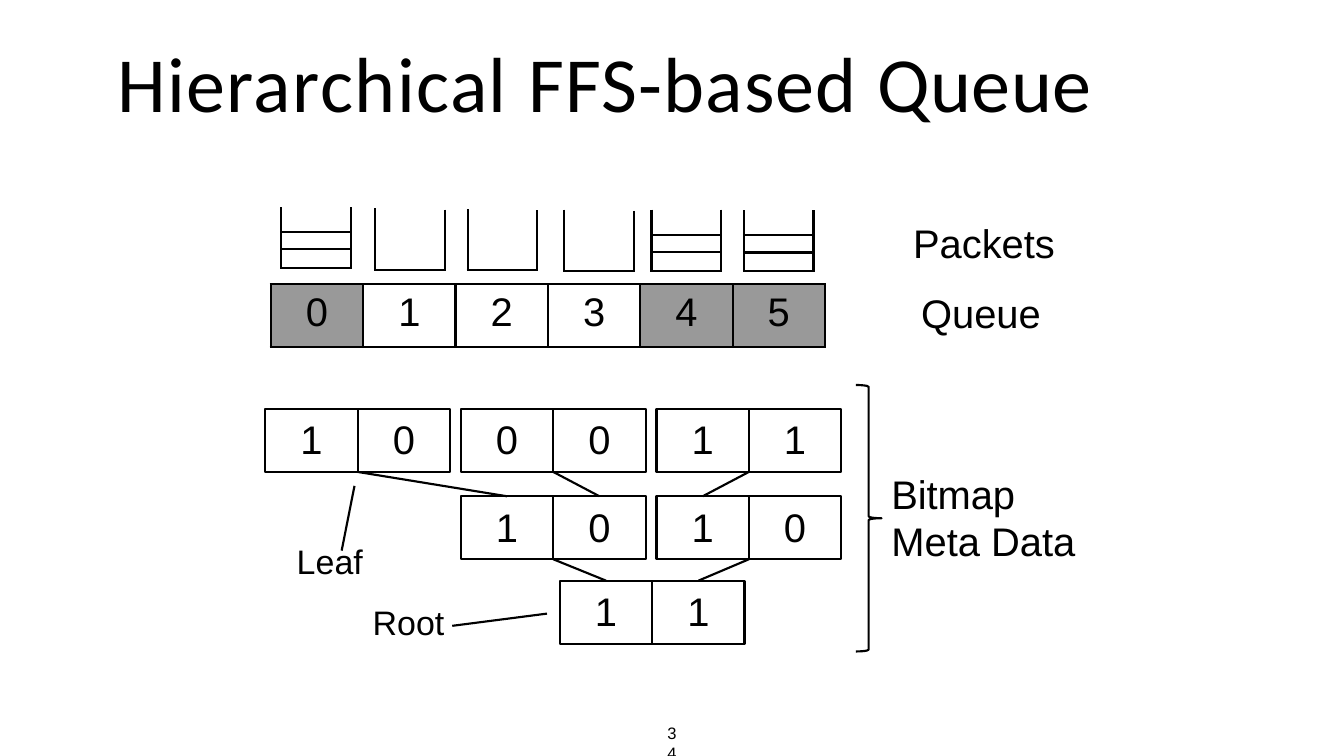
from lxml import etree
from pptx import Presentation, util as u
from pptx.dml.color import RGBColor
from pptx.enum import shapes, text
from pptx.oxml.ns import qn

TITLE = [("Hierarchical ", 1.7), ("FFS-based ", 1.5), ("Queue", 0.5)]
PAGE = [("34", 0.1)]
QUEUE = [("0", True), ("1", False), ("2", False), ("3", False), ("4", True), ("5", True)]
BUCKET_CORNERS = [(331.4, 244.1), (442.1, 245.6), (550.9, 246.4),
                  (664.8, 247.1), (767.6, 247), (876.4, 247.7)]
LEVELS = [
    (312.6, 481.8, ["10", "00", "11"]),
    (543, 584.7, ["10", "10"]),
    (659.6, 684.1, ["11"]),
]
LABELS = [
    ([("Packets\vQueue", 0)], (1071.4, 231.8, 172.8, 165.6),
     dict(size="body", inset=0.7, before=0.9, spacing=1.45, margin=13.7, indent=-9.4)),
    ([("Bitmap\v", -0.1), ("Meta ", 0), ("Data", -0.1)], (1049.4, 550.8, 218.9, 113.8),
     dict(size="body", inset=3.6, before=3.7, spacing=u.Pt(55.5), margin=0.7)),
    ([("Root", 0.1)], (438.2, 707, 87.1, 50.4),
     dict(size="note", inset=1.4, before=1.4, margin=0.7)),
    ([("Leaf", 0.1)], (348.8, 635, 80.6, 50.4),
     dict(size="note", inset=1.4, before=1.4, margin=0.7)),
]
POINTERS = [((532.8, 737.3), (644.4, 722.9)), ((402.5, 648.7), (417.6, 572.4))]

THEME = {
    "ink": RGBColor(0, 0, 0), "paper": RGBColor(255, 255, 255),
    "occupied": RGBColor(0x99, 0x99, 0x99),
    "title": 92, "body": 47, "note": 40, "page": 19.5,
    "stroke": 2.52, "border": 3,
}
CELL_W, CELL_H = 108.8, 74.2
PAIR_PITCH = 230.4
QUEUE_LEFT, QUEUE_TOP = 319.1, 334.9
BUCKET_W, BUCKET_H = 82.1, 72
BUCKET_LIP = 1.3
PACKET_ROWS = [29.5, 20.2, 22.3]

deck = Presentation()
deck.slide_width, deck.slide_height = u.Pt(1583.28), u.Pt(890.64)
slide = deck.slides.add_slide(deck.slide_layouts[6])


def points(*lengths):
    return [u.Pt(length) for length in lengths]


def write(frame, pieces, *, size, font="Arial", align=text.PP_ALIGN.LEFT, inset=0,
          before=0, spacing=None, margin=0, indent=0):
    frame.word_wrap = True
    frame.vertical_anchor = text.MSO_ANCHOR.TOP
    frame.margin_left = frame.margin_right = frame.margin_bottom = 0
    frame.margin_top = u.Pt(inset)
    line = frame.paragraphs[0]
    line.alignment = align
    line.space_before = u.Pt(before)
    if spacing:
        line.line_spacing = spacing
    layout = line._p.get_or_add_pPr()
    layout.set("marL", str(u.Pt(margin)))
    layout.set("indent", str(u.Pt(indent)))
    for words, tracking in pieces:
        for row, part in enumerate(words.split("\v")):
            if row:
                line.add_line_break()
            if not part:
                continue
            run = line.add_run()
            run.text = part
            run.font.name, run.font.size = font, u.Pt(THEME[size])
            run.font.color.rgb = THEME["ink"]
            run._r.get_or_add_rPr().set("spc", str(round(tracking * 100)))


def label(pieces, box, **style):
    write(slide.shapes.add_textbox(*points(*box)).text_frame, pieces, **style)


def stroke(shape):
    shape.line.color.rgb = THEME["ink"]
    shape.line.width = u.Pt(THEME["stroke"])


def connect(start, end):
    line = slide.shapes.add_connector(shapes.MSO_CONNECTOR.STRAIGHT, *points(*start, *end))
    stroke(line)
    etree.SubElement(line._element.spPr, qn("a:effectLst"))


def border(cell, edges):
    properties = cell._tc.get_or_add_tcPr()
    for edge in "LRTB":
        side = etree.SubElement(properties, qn(f"a:ln{edge}"), w=str(u.Pt(THEME["border"])))
        if edge in edges:
            paint = etree.SubElement(side, qn("a:solidFill"))
            etree.SubElement(paint, qn("a:srgbClr"), val=str(THEME["ink"]))
        else:
            etree.SubElement(side, qn("a:noFill"))


def grid(left, top, widths, heights):
    table = slide.shapes.add_table(len(heights), len(widths),
                                   *points(left, top, sum(widths), sum(heights))).table
    table.first_row = table.horz_banding = False
    for column, width in zip(table.columns, widths):
        column.width = u.Pt(width)
    for row, height in zip(table.rows, heights):
        row.height = u.Pt(height)
    for cell in table.iter_cells():
        cell.margin_left = cell.margin_right = cell.margin_top = cell.margin_bottom = 0
    return table


def draw_queue():
    table = grid(QUEUE_LEFT, QUEUE_TOP, [CELL_W] * len(QUEUE), [CELL_H])
    for cell, (number, occupied) in zip(table.iter_cells(), QUEUE):
        write(cell.text_frame, [(number, 0)], size="body",
              align=text.PP_ALIGN.CENTER, before=7.4)
        cell.margin_top = u.Pt(7.2)
        border(cell, "LRTB")
        cell.fill.solid()
        cell.fill.fore_color.rgb = THEME["occupied" if occupied else "paper"]


def draw_bucket(left, top, occupied):
    if occupied:
        table = grid(left, top, [BUCKET_W], PACKET_ROWS)
        for row, cell in enumerate(table.iter_cells()):
            border(cell, "LRTB" if row else "LRB")
            cell.fill.background()
            etree.SubElement(cell.text_frame.paragraphs[0]._p, qn("a:endParaRPr"), sz="800")
        return
    right, bottom = left + BUCKET_W, top + BUCKET_H
    connect((right, top + BUCKET_LIP), (right, bottom + BUCKET_LIP))
    connect((left, top), (left, bottom))
    connect((left - BUCKET_LIP, bottom), (right, bottom))


def draw_bit(bit, left, top):
    box = slide.shapes.add_shape(shapes.MSO_SHAPE.RECTANGLE, *points(left, top, CELL_W, CELL_H))
    box.shadow.inherit = False
    box.fill.solid()
    box.fill.fore_color.rgb = THEME["paper"]
    stroke(box)
    write(box.text_frame, [(bit, 0.1)], size="body", align=text.PP_ALIGN.CENTER,
          inset=7.2, before=7.4)


def bit_left(level, index):
    pair, side = divmod(index, 2)
    return LEVELS[level][0] + pair * PAIR_PITCH + side * CELL_W


def draw_bitmap():
    for level, (_, top, pairs) in enumerate(LEVELS):
        for index, bit in enumerate("".join(pairs)):
            draw_bit(bit, bit_left(level, index), top)
    for level, (_, top, pairs) in enumerate(LEVELS[:-1]):
        for pair in range(len(pairs)):
            connect((bit_left(level, 2 * pair + 1), top + CELL_H),
                    (bit_left(level + 1, pair) + CELL_W / 2, LEVELS[level + 1][1]))


def draw_brace():
    brace = slide.shapes.add_shape(shapes.MSO_SHAPE.RIGHT_BRACE, *points(1008.2, 453.6, 30.2, 313.9))
    brace.adjustments[0], brace.adjustments[1] = 0.07, 0.5
    brace.shadow.inherit = False
    brace.fill.background()
    stroke(brace)


label(TITLE, (137.5, 38.9, 1307.5, 113), size="title", font="Calibri",
      inset=1.4, before=1.4, margin=0.7)
draw_queue()
for (left, top), (_, occupied) in zip(BUCKET_CORNERS, QUEUE):
    draw_bucket(left, top, occupied)
draw_bitmap()
draw_brace()
for start, end in POINTERS:
    connect(start, end)
for pieces, box, style in LABELS:
    label(pieces, box, **style)
label(PAGE, (784.1, 851, 15.1, 25.2), size="page", inset=0.7, before=0.6, margin=2.2)

deck.save("out.pptx")
